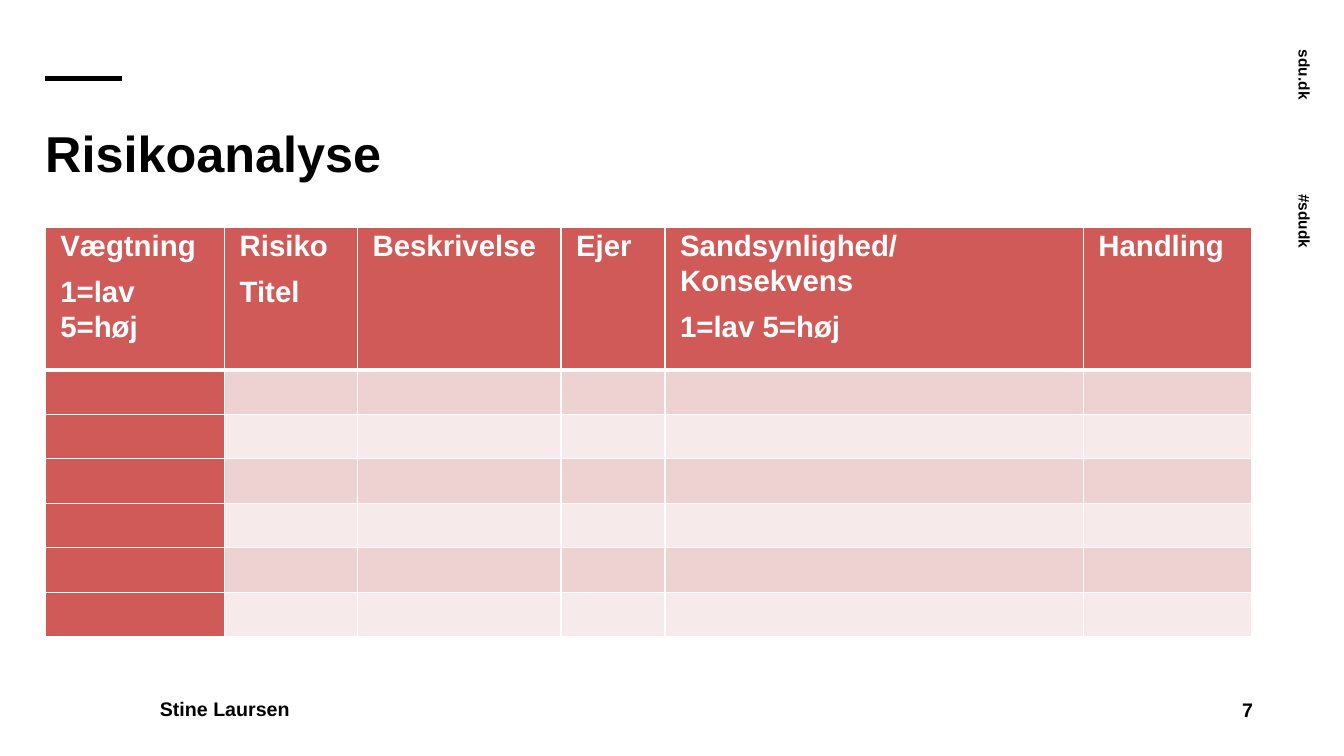
from lxml import etree
from pptx import Presentation
from pptx.dml.color import RGBColor
from pptx.enum.shapes import MSO_CONNECTOR
from pptx.enum.text import MSO_ANCHOR, PP_ALIGN
from pptx.oxml.ns import qn
from pptx.util import Cm, Pt

TOP, MIDDLE, BOTTOM = MSO_ANCHOR.TOP, MSO_ANCHOR.MIDDLE, MSO_ANCHOR.BOTTOM
LEFT, RIGHT = PP_ALIGN.LEFT, PP_ALIGN.RIGHT
STRAIGHT = MSO_CONNECTOR.STRAIGHT

BLACK, WHITE = "000000", "FFFFFF"
RED, BANDS = "D05A57", ("EED2D1", "F7EAEA")
MARGIN = 1.14
COLUMNS = [
    (4.52, ["Vægtning", "1=lav 5=høj"]),
    (3.35, ["Risiko", "Titel"]),
    (5.13, ["Beskrivelse"]),
    (2.62, ["Ejer"]),
    (10.54, ["Sandsynlighed/Konsekvens", "1=lav 5=høj"]),
    (4.24, ["Handling"]),
]
HEADER_HEIGHT, ROW_HEIGHT, RISK_ROWS = 3.58, 1.12, 6


def rgb(value):
    """Return the colour for a hex string."""
    return RGBColor.from_string(value)


def set_attrs(target, values):
    """Set each attribute of target from a dict."""
    for name, value in values.items():
        setattr(target, name, value)


def write(tf, lines, size, color=BLACK, **paragraph_format):
    """Write bold Arial paragraphs into a text frame."""
    for i, line in enumerate(lines):
        p = tf.paragraphs[0] if i == 0 else tf.add_paragraph()
        r = p.add_run()
        r.text = line
        set_attrs(r.font, {"name": "Arial", "size": Pt(size), "bold": True})
        r.font.color.rgb = rgb(color)
        set_attrs(p, paragraph_format)


def place(sp, left, top, width, height, anchor, bottom=0):
    """Position a text shape and set its frame."""
    set_attrs(sp, {"left": Cm(left), "top": Cm(top),
                   "width": Cm(width), "height": Cm(height)})
    set_attrs(sp.text_frame, {
        "word_wrap": True, "vertical_anchor": anchor, "margin_left": 0,
        "margin_right": 0, "margin_top": 0, "margin_bottom": Cm(bottom)})


def add_label(s, text, box, size, anchor, rotation=0, bottom=0, **paragraph_format):
    """Add a one-line text box."""
    sp = s.shapes.add_textbox(0, 0, 0, 0)
    place(sp, *box, anchor, bottom)
    sp.rotation = rotation
    write(sp.text_frame, [text], size, **paragraph_format)


def add_title(s, text):
    """Fill and format the title placeholder."""
    sp = s.shapes.title
    place(sp, MARGIN, 2.97, 30.4, 1.75, MIDDLE)
    write(sp.text_frame, [text], 36, alignment=LEFT)


def add_rule(s, left, top, length):
    """Add the short accent line above the title."""
    line = s.shapes.add_connector(
        STRAIGHT, Cm(left), Cm(top), Cm(left + length), Cm(top))
    line.line.color.rgb = rgb(BLACK)
    line.line.width = Pt(3)
    etree.SubElement(line._element.spPr, qn("a:effectLst"))


def style_cell(cell, fill, top_width, bottom_width):
    """Give a cell white borders and a solid fill."""
    tc_pr = cell._tc.get_or_add_tcPr()
    widths = {"L": 1, "R": 1, "T": top_width, "B": bottom_width}
    for side, width in widths.items():
        ln = etree.SubElement(tc_pr, qn(f"a:ln{side}"), w=str(Pt(width)))
        solid = etree.SubElement(ln, qn("a:solidFill"))
        etree.SubElement(solid, qn("a:srgbClr"), val=WHITE)
    cell.fill.solid()
    cell.fill.fore_color.rgb = rgb(fill)


def add_risk_table(s, left, top):
    """Add the risk table with its header and empty banded rows."""
    width = sum(w for w, _ in COLUMNS)
    height = HEADER_HEIGHT + RISK_ROWS * ROW_HEIGHT
    table = s.shapes.add_table(RISK_ROWS + 1, len(COLUMNS), Cm(left), Cm(top),
                               Cm(width), Cm(height)).table
    table.first_col = True
    for i, row in enumerate(table.rows):
        row.height = Cm(ROW_HEIGHT if i else HEADER_HEIGHT)
        for j, cell in enumerate(row.cells):
            fill = RED if i == 0 or j == 0 else BANDS[(i - 1) % 2]
            style_cell(cell, fill, 3 if i == 1 else 1, 1 if i else 3)
    for j, (column_width, lines) in enumerate(COLUMNS):
        table.columns[j].width = Cm(column_width)
        cell = table.cell(0, j)
        set_attrs(cell, {"margin_left": Cm(0.38), "margin_right": Cm(0.38),
                         "margin_top": 0, "margin_bottom": 0})
        write(cell.text_frame, lines, 21, WHITE,
              line_spacing=1.07, space_after=Pt(8))


def main():
    """Build the slide and save it."""
    prs = Presentation()
    prs.slide_width, prs.slide_height = Cm(33.87), Cm(19.05)
    s = prs.slides.add_slide(prs.slide_layouts[5])
    for text, top in (("sdu.dk", 2.01), ("#sdudk", 5.64)):
        add_label(s, text, (31.9, top, 2.54, 1.04), 11, BOTTOM, rotation=90)
    add_rule(s, MARGIN, 1.98, 1.93)
    add_label(s, "Stine Laursen", (4.03, 17.63, 17.68, 0.79), 14, BOTTOM,
              bottom=0.25, line_spacing=0.9)
    add_title(s, "Risikoanalyse")
    add_label(s, "7", (30.18, 17.58, 1.4, 0.79), 14, TOP, alignment=RIGHT)
    add_risk_table(s, MARGIN, 5.74)
    prs.save("out.pptx")


if __name__ == "__main__":
    main()
